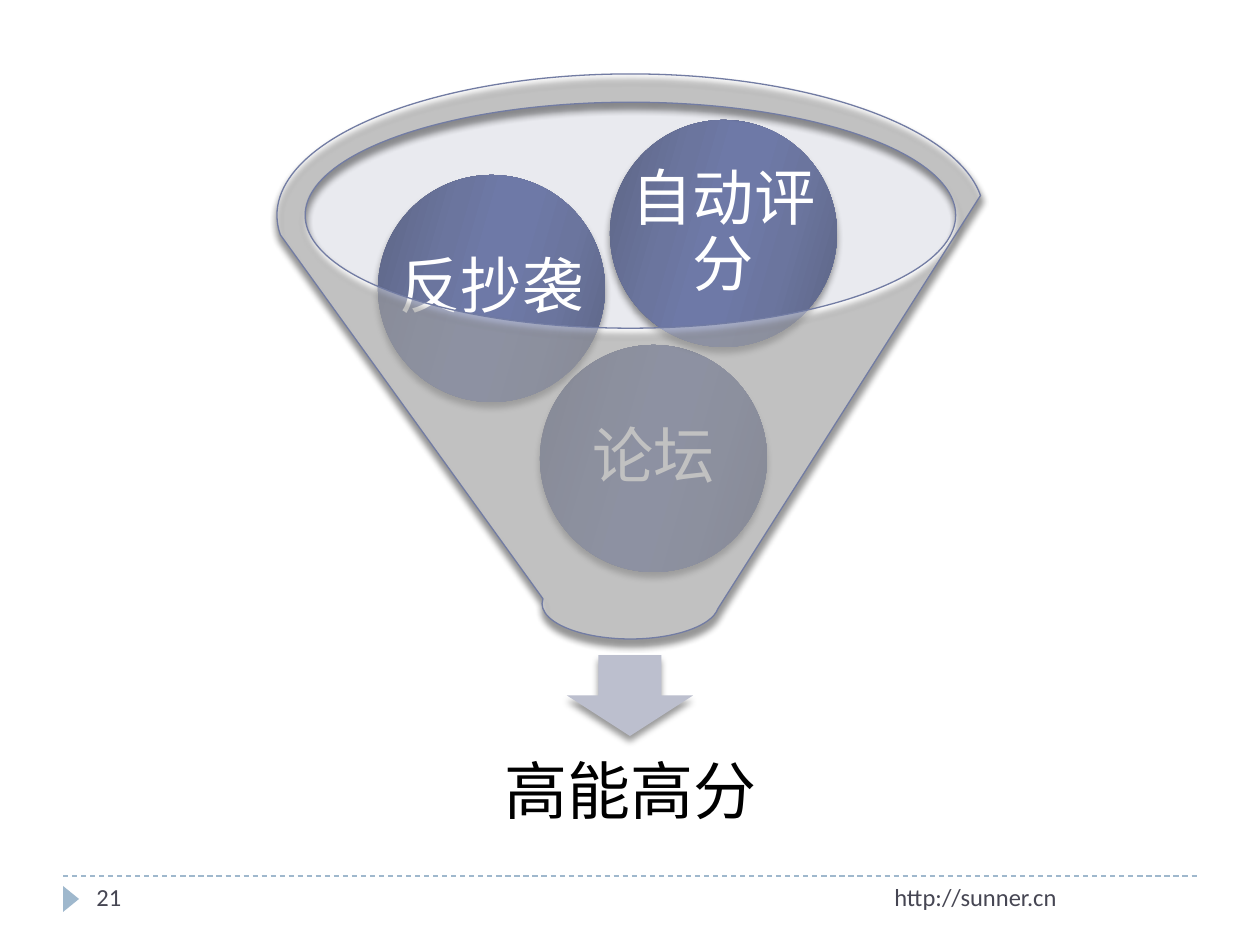
"""Build the funnel slide showing three ingredients flowing into one result."""
from lxml.etree import SubElement
from pptx import Presentation
from pptx.dml.color import RGBColor
from pptx.enum.dml import MSO_LINE
from pptx.enum.shapes import MSO_CONNECTOR, MSO_SHAPE
from pptx.enum.text import MSO_ANCHOR, PP_ALIGN
from pptx.oxml.ns import qn
from pptx.util import Pt

PX = 914400 / 126
COLORS = {
    "accent": "9FB8CD", "footer": "464653", "rim": "C9CCD7", "arrow": "BCBFCE",
    "outline": "727CA3", "white": "FFFFFF", "black": "000000",
    "edge": "5D6585", "mid": "6B759E", "glow": "6E79A7",
}
BALL_STOPS = [(0, "edge"), (30, "mid"), (45, "glow"), (55, "glow"), (73, "mid"), (100, "edge")]

prs = Presentation()
prs.slide_width, prs.slide_height = round(1260 * PX), round(945 * PX)
slide = prs.slides.add_slide(prs.slide_layouts[6])


def add_figure(preset, box, color, opacity=100, shadow=False):
    figure = slide.shapes.add_shape(preset, *[round(v * PX) for v in box])
    figure.shadow.inherit = False
    figure.line.fill.background()
    figure.fill.solid()
    figure.fill.fore_color.rgb = RGBColor.from_string(COLORS[color])
    properties = figure.fill._xPr
    if opacity < 100:
        solid = properties.find(qn("a:solidFill"))
        SubElement(solid[0], qn("a:alpha"), val=str(opacity * 1000))
    if shadow:
        outer = SubElement(properties.find(qn("a:effectLst")), qn("a:outerShdw"), blurRad="50800",
                           dist="43000", dir="5400000", rotWithShape="0")
        black = SubElement(outer, qn("a:srgbClr"), val=COLORS["black"])
        SubElement(black, qn("a:alpha"), val="40000")
    return figure


def add_label(text, box, size, color, inset=None):
    frame = slide.shapes.add_textbox(*[round(v * PX) for v in box]).text_frame
    frame.word_wrap = True
    paragraph = frame.paragraphs[0]
    paragraph.text = text
    paragraph.font.name = "Calibri"
    paragraph.font.size = Pt(size)
    paragraph.font.color.rgb = RGBColor.from_string(COLORS[color])
    if inset is not None:
        frame.vertical_anchor = MSO_ANCHOR.MIDDLE
        frame.margin_left = frame.margin_right = round(inset * PX)
        frame.margin_top = frame.margin_bottom = round(inset * PX)
        paragraph.alignment = PP_ALIGN.CENTER
        paragraph.line_spacing = 0.9


divider = slide.shapes.add_connector(
    MSO_CONNECTOR.STRAIGHT, *[round(v * PX) for v in (63, 876, 1197, 876)])
divider.line.color.rgb = RGBColor.from_string(COLORS["accent"])
divider.line.width = Pt(0.75)
divider.line.dash_style = MSO_LINE.DASH
SubElement(divider.line._ln.getparent(), qn("a:effectLst"))

marker = add_figure(MSO_SHAPE.ISOSCELES_TRIANGLE, (58, 891, 26, 16), "accent")
marker.rotation = 90
add_label("http://sunner.cn", (882, 876, 315, 50), 14, "footer")
add_label("21", (84, 876, 273, 50), 14, "footer")

add_figure(MSO_SHAPE.OVAL, (304, 102, 651, 226), "rim", opacity=40)
add_figure(MSO_SHAPE.DOWN_ARROW, (567, 655, 126, 81), "arrow", shadow=True)
add_label("高能高分", (328, 719, 605, 151), 36, "black", inset=35)

for topic, left, top in [("论坛", 540, 345), ("反抄袭", 378, 175), ("自动评分", 610, 120)]:
    box = (left, top, 227, 227)
    ball = add_figure(MSO_SHAPE.OVAL, box, "glow", shadow=True)
    ball.fill.gradient()
    gradient = ball.fill._xPr.find(qn("a:gradFill"))
    stops = gradient.find(qn("a:gsLst"))
    for stop in list(stops):
        stops.remove(stop)
    for position, color in BALL_STOPS:
        stop = SubElement(stops, qn("a:gs"), pos=str(position * 1000))
        SubElement(stop, qn("a:srgbClr"), val=COLORS[color])
    gradient.find(qn("a:lin")).set("ang", str(16 * 60000))
    add_label(topic, box, 35, "white", inset=6)

funnel = add_figure(MSO_SHAPE.FUNNEL, (277, 74, 707, 565), "white", opacity=40, shadow=True)
funnel.line.color.rgb = RGBColor.from_string(COLORS["outline"])
funnel.line.width = Pt(0.75)

prs.save("out.pptx")
